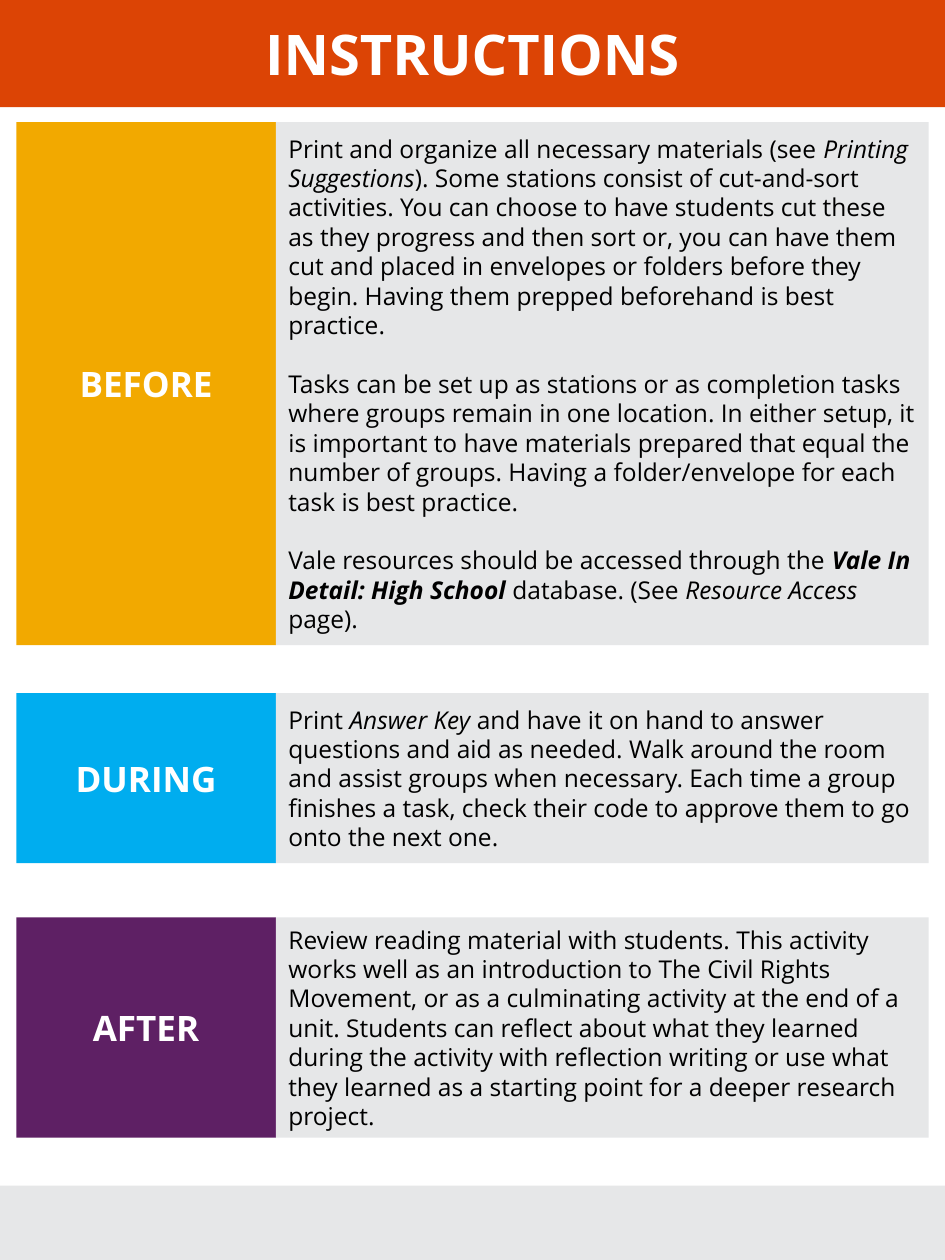
from dataclasses import dataclass

from pptx import Presentation
from pptx.dml.color import RGBColor
from pptx.enum.shapes import MSO_SHAPE
from pptx.enum.text import MSO_ANCHOR, MSO_AUTO_SIZE, PP_ALIGN
from pptx.util import Inches, Pt

RECTANGLE = MSO_SHAPE.RECTANGLE
MIDDLE = MSO_ANCHOR.MIDDLE
NO_AUTOFIT = MSO_AUTO_SIZE.NONE
LEFT, CENTER = PP_ALIGN.LEFT, PP_ALIGN.CENTER

WHITE = RGBColor(0xFF, 0xFF, 0xFF)
BLACK = RGBColor(0x00, 0x00, 0x00)
GRAY = RGBColor(0xE6, 0xE7, 0xE8)
ORANGE = RGBColor(0xDC, 0x44, 0x05)
GOLD = RGBColor(0xF2, 0xA9, 0x00)
BLUE = RGBColor(0x00, 0xAD, 0xEF)
PURPLE = RGBColor(0x5E, 0x20, 0x64)

FONT = "Open Sans"
LINE_PITCH = Pt(16.8)
MARGIN, LABEL_WIDTH, TEXT_WIDTH = 0.13, 2.06, 5.18

TITLE_FORMAT = {"name": FONT, "size": Pt(32), "bold": True}
LABEL_FORMAT = {"name": FONT, "size": Pt(20), "bold": True}
BODY_FORMAT = {"name": FONT, "size": Pt(14), "bold": False}


@dataclass
class Span:
    text: str
    italic: bool = False
    bold: bool = False


@dataclass
class Phase:
    label: str
    color: RGBColor
    top: float
    height: float
    paragraphs: list[list[Span]]


PHASES = [
    Phase("BEFORE", GOLD, 0.97, 4.15, [
        [
            Span("Print and organize all necessary materials (see"),
            Span(" Printing Suggestions", italic=True),
            Span("). Some stations consist of cut-and-sort activities. You can "
                 "choose to have students cut these as they progress and then "
                 "sort or, you can have them cut and placed in envelopes or "
                 "folders before they begin. Having them prepped beforehand is "
                 "best practice."),
        ],
        [
            Span("Tasks can be set up as stations or as completion tasks where "
                 "groups remain in one location. In either setup, it is "
                 "important to have materials prepared that equal the number of "
                 "groups. Having a folder/envelope for each task is best "
                 "practice."),
        ],
        [
            Span("Vale resources should be accessed through the "),
            Span("Vale In Detail: High School ", italic=True, bold=True),
            Span("database. (See"),
            Span(" Resource Access ", italic=True),
            Span("page)."),
        ],
    ]),
    Phase("DURING", BLUE, 5.5, 1.35, [
        [
            Span("Print "),
            Span("Answer Key ", italic=True),
            Span("and have it on hand to answer questions and aid as needed. "
                 "Walk around the room and assist groups when necessary. Each "
                 "time a group finishes a task, check their code to approve "
                 "them to go onto the next one."),
        ],
    ]),
    Phase("AFTER", PURPLE, 7.28, 1.75, [
        [
            Span("Review reading material with students. This activity works "
                 "well as an introduction to The Civil Rights Movement, or as a "
                 "culminating activity at the end of a unit. Students can "
                 "reflect about what they learned during the activity with "
                 "reflection writing or use what they learned as a starting "
                 "point for a deeper research project."),
        ],
    ]),
]


def apply_format(font, values: dict, color: RGBColor) -> None:
    for name, value in values.items():
        setattr(font, name, value)
    font.color.rgb = color


def add_block(slide, left: float, top: float, width: float, height: float,
              color: RGBColor):
    box = slide.shapes.add_shape(RECTANGLE, Inches(left), Inches(top),
                                 Inches(width), Inches(height))
    box.shadow.inherit = False
    box.fill.solid()
    box.fill.fore_color.rgb = color
    box.line.fill.background()
    return box


def write_heading(box, text: str, values: dict) -> None:
    frame = box.text_frame
    frame.word_wrap = True
    frame.auto_size = NO_AUTOFIT
    frame.vertical_anchor = MIDDLE
    para = frame.paragraphs[0]
    para.alignment = CENTER
    span = para.add_run()
    span.text = text
    apply_format(span.font, values, WHITE)


def write_body(box, paragraphs: list[list[Span]]) -> None:
    frame = box.text_frame
    frame.word_wrap = True
    frame.vertical_anchor = MIDDLE
    for index, spans in enumerate(paragraphs):
        para = frame.add_paragraph() if index else frame.paragraphs[0]
        para.alignment = LEFT
        para.line_spacing = LINE_PITCH
        if index:
            para.space_before = LINE_PITCH
        for part in spans:
            span = para.add_run()
            span.text = part.text
            emphasis = {"italic": part.italic, "bold": part.bold}
            apply_format(span.font, BODY_FORMAT | emphasis, BLACK)


def add_phase(slide, phase: Phase) -> None:
    label = add_block(slide, MARGIN, phase.top, LABEL_WIDTH, phase.height,
                      phase.color)
    write_heading(label, phase.label, LABEL_FORMAT)
    panel = add_block(slide, MARGIN + LABEL_WIDTH, phase.top, TEXT_WIDTH,
                      phase.height, GRAY)
    write_body(panel, phase.paragraphs)


def main() -> None:
    deck = Presentation()
    deck.slide_width, deck.slide_height = Inches(7.5), Inches(10)
    slide = deck.slides.add_slide(deck.slide_layouts[5])

    # Title band
    title = slide.shapes.title
    title.left, title.top = Inches(0), Inches(0)
    title.width, title.height = deck.slide_width, Inches(0.85)
    title.fill.solid()
    title.fill.fore_color.rgb = ORANGE
    write_heading(title, "INSTRUCTIONS", TITLE_FORMAT)

    # Footer band
    add_block(slide, 0, 9.41, 7.5, 0.59, GRAY)

    # Label and text panel for each phase
    for phase in PHASES:
        add_phase(slide, phase)

    deck.save("out.pptx")


if __name__ == "__main__":
    main()
